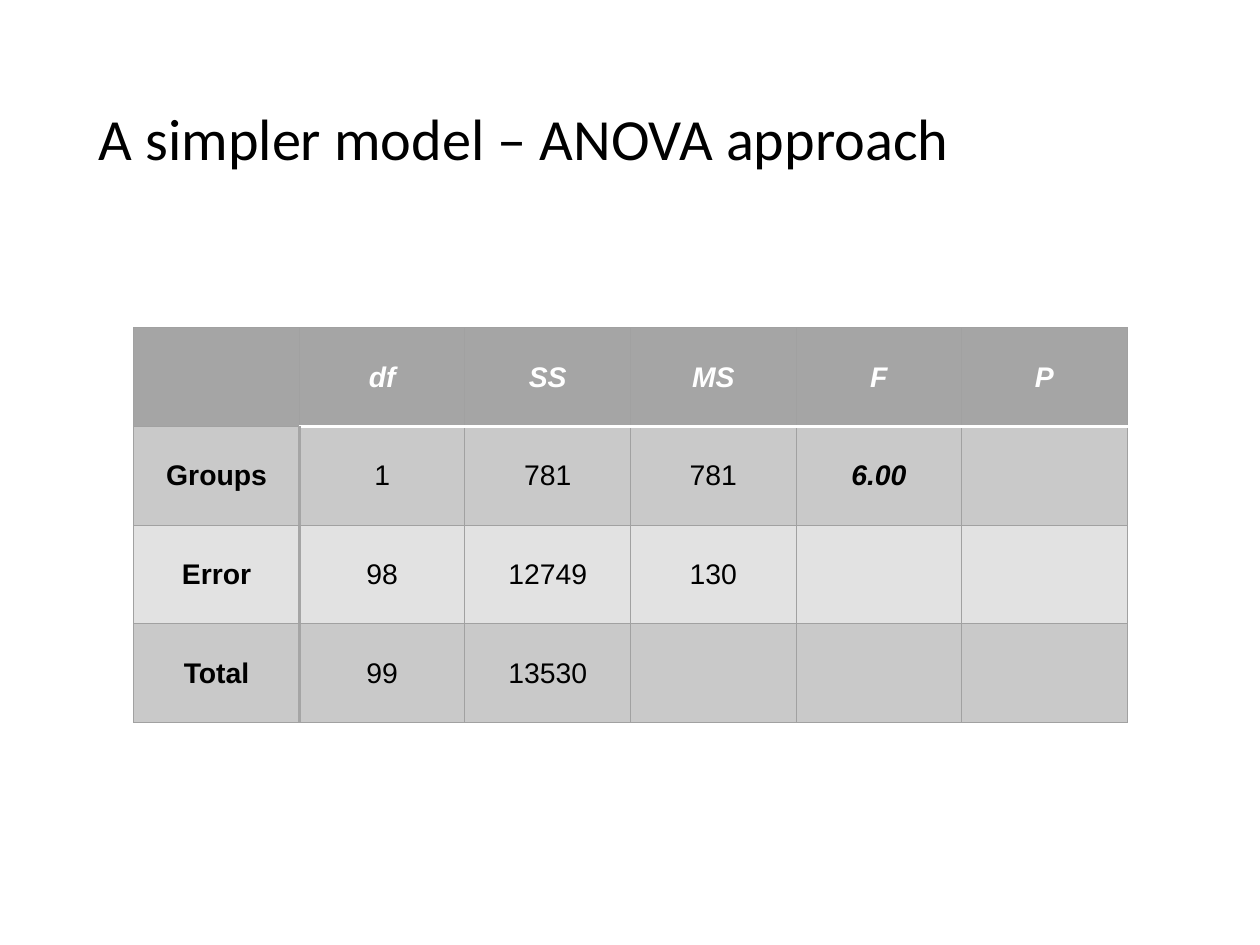
from dataclasses import dataclass

from lxml import etree
from pptx import Presentation
from pptx.dml.color import RGBColor
from pptx.enum import text
from pptx.oxml import ns
from pptx.util import Inches, Pt

# Content
TITLE = "A simpler model – ANOVA approach"
ANOVA = [
    ["", "df", "SS", "MS", "F", "P"],
    ["Groups", "1", "781", "781", "6.00", ""],
    ["Error", "98", "12749", "130", "", ""],
    ["Total", "99", "13530", "", "", ""],
]
F_RATIO = (1, 4)  # row and column of the highlighted result


@dataclass(frozen=True)
class Theme:
    title_font: str = "Calibri"
    table_font: str = "Arial"
    title_size: float = 37
    table_size: float = 18
    ink: str = "000000"
    white: str = "FFFFFF"
    header: str = "A5A5A5"
    odd_row: str = "C9C9C9"
    even_row: str = "E2E2E2"
    grid: str = "A1A1A1"
    thin: float = 0.75
    thick: float = 2


THEME = Theme()

# Layout in inches
SLIDE_W, SLIDE_H = 11.11, 8.33
TITLE_BOX = (0.76, 0.44, 9.58, 1.61)
TABLE_LEFT, TABLE_TOP = 1.18, 2.89
COLUMN_W, ROW_H = 1.46, 0.87
TITLE_INSET = 0.11


def style_run(run, font, size, color, bold=False, italic=False):
    run.font.name, run.font.size = font, Pt(size)
    run.font.bold, run.font.italic = bold, italic
    run.font.color.rgb = RGBColor.from_string(color)


def add_border(cell, side, color, width):
    properties = cell._tc.get_or_add_tcPr()
    line = etree.SubElement(properties, ns.qn(f"a:ln{side}"), w=str(Pt(width)))
    fill = etree.SubElement(line, ns.qn("a:solidFill"))
    etree.SubElement(fill, ns.qn("a:srgbClr"), val=color)


def cell_borders(row, column):
    grid = (THEME.grid, THEME.thin)
    label_edge = (THEME.header, THEME.thick)
    header_rule = (THEME.white, THEME.thick) if column else grid
    return {
        "L": label_edge if row and column == 1 else grid,
        "R": label_edge if row and column == 0 else grid,
        "T": header_rule if row == 1 else grid,
        "B": header_rule if row == 0 else grid,
    }


def fill_cell(cell, row, column, value):
    for side, (color, width) in cell_borders(row, column).items():
        add_border(cell, side, color, width)
    band = THEME.odd_row if row % 2 else THEME.even_row
    cell.fill.solid()
    cell.fill.fore_color.rgb = RGBColor.from_string(band if row else THEME.header)

    cell.vertical_anchor = text.MSO_ANCHOR.MIDDLE
    cell.text_frame.text = value
    paragraph = cell.text_frame.paragraphs[0]
    paragraph.alignment = text.PP_ALIGN.CENTER
    italic = row == 0 or (row, column) == F_RATIO
    for run in paragraph.runs:
        style_run(run, THEME.table_font, THEME.table_size,
                  THEME.ink if row else THEME.white,
                  bold=italic or column == 0, italic=italic)


def add_title(slide):
    frame = slide.shapes.add_textbox(*map(Inches, TITLE_BOX)).text_frame
    frame.word_wrap = True
    frame.vertical_anchor = text.MSO_ANCHOR.MIDDLE
    frame.margin_left = frame.margin_right = Inches(TITLE_INSET)
    frame.margin_top = frame.margin_bottom = Inches(TITLE_INSET)
    frame.text = TITLE
    heading = frame.paragraphs[0]
    heading.line_spacing = 0.9
    style_run(heading.runs[0], THEME.title_font, THEME.title_size, THEME.ink)


def add_anova(slide):
    rows, columns = len(ANOVA), len(ANOVA[0])
    anova = slide.shapes.add_table(
        rows, columns, Inches(TABLE_LEFT), Inches(TABLE_TOP),
        Inches(columns * COLUMN_W), Inches(rows * ROW_H)).table
    for column in anova.columns:
        column.width = Inches(COLUMN_W)
    for row in anova.rows:
        row.height = Inches(ROW_H)
    for r, values in enumerate(ANOVA):
        for c, value in enumerate(values):
            fill_cell(anova.cell(r, c), r, c, value)


def main():
    deck = Presentation()
    deck.slide_width, deck.slide_height = Inches(SLIDE_W), Inches(SLIDE_H)
    slide = deck.slides.add_slide(deck.slide_layouts[6])
    add_title(slide)
    add_anova(slide)
    deck.save("out.pptx")


if __name__ == "__main__":
    main()
